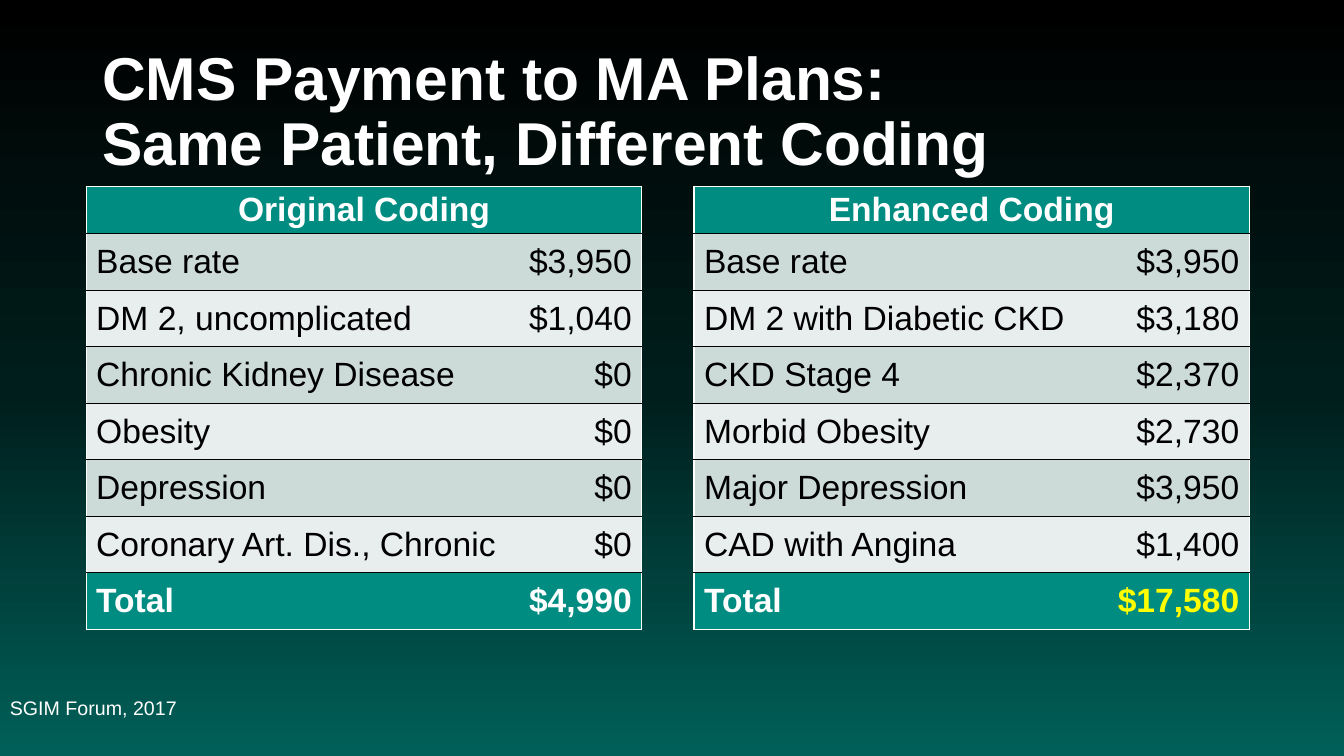
from copy import deepcopy
from dataclasses import dataclass

from lxml import etree
from pptx import Presentation
from pptx.dml.color import RGBColor
from pptx.enum.text import MSO_ANCHOR, PP_ALIGN
from pptx.oxml.ns import qn
from pptx.slide import Slide
from pptx.table import _Cell
from pptx.text.text import _Paragraph
from pptx.util import Pt

MIDDLE = MSO_ANCHOR.MIDDLE
LEFT, CENTER, RIGHT = PP_ALIGN.LEFT, PP_ALIGN.CENTER, PP_ALIGN.RIGHT

COLORS = {
    "white": "FFFFFF",
    "black": "000000",
    "teal": "008C81",
    "band_dark": "CCDAD8",
    "band_light": "E7EEED",
    "highlight": "FFFF00",
}
BACKGROUND_STOPS = [(0, "000000"), (0.52, "001E1C"), (1, "006059")]
FONT = "Arial"
TABLE_TOP = 133.2
HEADER_HEIGHT = 33.6
ROW_HEIGHT = 40.35


@dataclass
class Label:
    lines: list[str]
    left: float
    top: float
    width: float
    height: float
    size: float
    bold: bool


@dataclass
class CodingTable:
    heading: str
    left: float
    column_widths: tuple[float, float]
    rows: list[tuple[str, str]]
    total: str
    total_color: str
    build_steps: list[int]


LABELS = [
    Label(["CMS Payment to MA Plans:", "Same Patient, Different Coding"],
          66, 28.8, 828, 104.4, 43.2, True),
    Label(["SGIM Forum, 2017"], 0, 473.76, 648, 66.24, 14, False),
]

TABLES = [
    CodingTable(
        "Original Coding", 61.5, (300.7, 96.3),
        [
            ("Base rate", "$3,950"),
            ("DM 2, uncomplicated", "$1,040"),
            ("Chronic Kidney Disease", "$0"),
            ("Obesity", "$0"),
            ("Depression", "$0"),
            ("Coronary Art. Dis., Chronic", "$0"),
        ],
        "$4,990", "white", [8],
    ),
    CodingTable(
        "Enhanced Coding", 495.7, (277.2, 119.5),
        [
            ("Base rate", "$3,950"),
            ("DM 2 with Diabetic CKD", "$3,180"),
            ("CKD Stage 4", "$2,370"),
            ("Morbid Obesity", "$2,730"),
            ("Major Depression", "$3,950"),
            ("CAD with Angina", "$1,400"),
        ],
        "$17,580", "highlight", list(range(8, 1, -1)),
    ),
]


def paint_background(slide: Slide) -> None:
    fill = slide.background.fill
    fill.gradient()
    fill.gradient_angle = 270
    stop_list = next(slide.element.iter(qn("a:gsLst")))
    stop_list.append(deepcopy(stop_list[0]))
    for stop, (position, color) in zip(fill.gradient_stops, BACKGROUND_STOPS):
        stop.position = position
        stop.color.rgb = RGBColor.from_string(color)


def add_run(paragraph: _Paragraph, text: str, size: float, color: str, bold: bool) -> None:
    run = paragraph.add_run()
    run.text = text
    run.font.name = FONT
    run.font.size = Pt(size)
    run.font.bold = bold
    run.font.color.rgb = RGBColor.from_string(COLORS[color])


def add_label(slide: Slide, label: Label) -> None:
    shape = slide.shapes.add_textbox(
        Pt(label.left), Pt(label.top), Pt(label.width), Pt(label.height))
    frame = shape.text_frame
    frame.word_wrap = True
    frame.vertical_anchor = MIDDLE
    paragraph = frame.paragraphs[0]
    paragraph.line_spacing = 0.9
    for index, line in enumerate(label.lines):
        if index:
            paragraph.add_line_break()
        add_run(paragraph, line, label.size, "white", label.bold)


def set_border(cell: _Cell, side: str, color: str | None) -> None:
    properties = cell._tc.get_or_add_tcPr()
    line = etree.SubElement(properties, qn(f"a:ln{side}"))
    if color is None:
        etree.SubElement(line, qn("a:noFill"))
        return
    line.set("w", str(Pt(1 if color == "white" else 0.75)))
    solid = etree.SubElement(line, qn("a:solidFill"))
    etree.SubElement(solid, qn("a:srgbClr"), val=COLORS[color])


def style_cell(cell: _Cell, borders: dict[str, str | None], fill: str) -> None:
    for side, color in borders.items():
        set_border(cell, side, color)
    cell.fill.solid()
    cell.fill.fore_color.rgb = RGBColor.from_string(COLORS[fill])
    cell.vertical_anchor = MIDDLE
    cell.margin_top = cell.margin_bottom = Pt(2.5)


def add_coding_table(slide: Slide, coding: CodingTable, row_count: int) -> None:
    all_rows = [(coding.heading, ""), *coding.rows, ("Total", coding.total)]
    total_index = len(all_rows) - 1
    frame = slide.shapes.add_table(
        row_count, 2, Pt(coding.left), Pt(TABLE_TOP),
        Pt(sum(coding.column_widths)), Pt(HEADER_HEIGHT + (row_count - 1) * ROW_HEIGHT))
    table = frame.table
    table.first_row = table.horz_banding = False
    for column, width in zip(table.columns, coding.column_widths):
        column.width = Pt(width)
    table.cell(0, 0).merge(table.cell(0, 1))

    for row_index, texts in enumerate(all_rows[:row_count]):
        is_header, is_total = row_index == 0, row_index == total_index
        emphasized = is_header or is_total
        table.rows[row_index].height = Pt(HEADER_HEIGHT if is_header else ROW_HEIGHT)
        band = "band_dark" if row_index % 2 else "band_light"
        for column_index, text in enumerate(texts):
            cell = table.cell(row_index, column_index)
            is_amount = column_index == 1
            borders = {
                "L": None if is_amount else "white",
                "R": "white" if is_amount or is_header else None,
                "T": "white" if is_header else "black",
                "B": "white" if is_total else "black",
            }
            style_cell(cell, borders, "teal" if emphasized else band)
            if cell.is_spanned:
                continue
            paragraph = cell.text_frame.paragraphs[0]
            paragraph.alignment = CENTER if is_header else RIGHT if is_amount else LEFT
            color = "white" if emphasized else "black"
            if is_total and is_amount:
                color = coding.total_color
            add_run(paragraph, text, 24, color, emphasized)


def main() -> None:
    presentation = Presentation()
    presentation.slide_width = Pt(960)
    presentation.slide_height = Pt(540)
    slide = presentation.slides.add_slide(presentation.slide_layouts[6])
    paint_background(slide)
    for label in LABELS:
        add_label(slide, label)
    for coding in TABLES:
        for row_count in coding.build_steps:
            add_coding_table(slide, coding, row_count)
    presentation.save("out.pptx")


if __name__ == "__main__":
    main()
